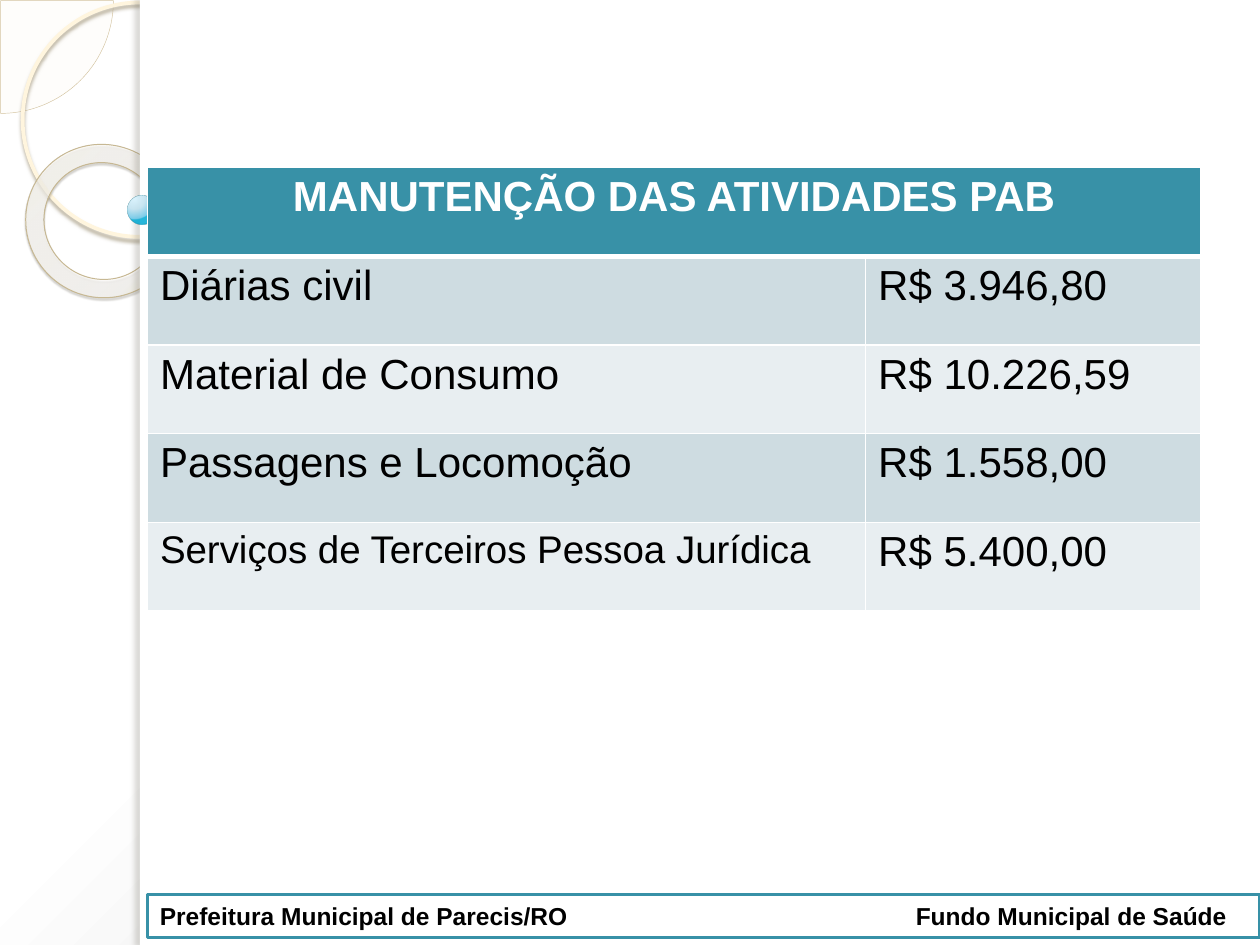
"""Build a health budget slide with a ringed side strip, a table and a footer."""
from lxml.etree import SubElement, Element
from pptx import Presentation
from pptx.dml.color import RGBColor as Rgb
from pptx.enum.shapes import MSO_SHAPE as Shape
from pptx.enum.text import MSO_ANCHOR as Anchor, PP_ALIGN as Align
from pptx.oxml.ns import qn
from pptx.util import Inches, Pt

WHITE, BLACK = Rgb(255, 255, 255), Rgb(0, 0, 0)
TEAL, DARK = Rgb(0x38, 0x91, 0xA7), Rgb(0x31, 0x80, 0x93)
BANDS = Rgb(0xCE, 0xDC, 0xE1), Rgb(0xE8, 0xEE, 0xF1)
CREAM, SAND = Rgb(0xFE, 0xFA, 0xF4), Rgb(0xD3, 0xC3, 0x9F)
IVORY, KHAKI = Rgb(0xFF, 0xF5, 0xDE), Rgb(0xC7, 0xB8, 0x93)
UMBER, BROWN = Rgb(0xB0, 0xA6, 0x8F), Rgb(0x5A, 0x54, 0x44)
GREY, SILVER = Rgb(0x73, 0x6F, 0x63), Rgb(0xC5, 0xC5, 0xC5)
SEA = Rgb(0x30, 0x8E, 0xA5)
PAPER = [(0, WHITE, 100), (40, WHITE, 100), (100, SILVER, 100)]
GOLD = [(0, Rgb(0xFF, 0xFC, 0xF6), 70), (70, Rgb(0xFF, 0xFE, 0xFB), 55),
        (100, Rgb(0xF0, 0xD2, 0x8E), 60)]
AQUA = [(0, Rgb(0xDA, 0xF4, 0xFF), 95), (50, Rgb(0xC3, 0xE3, 0xF0), 90),
        (95, Rgb(0x6B, 0xC7, 0xE8), 88), (100, Rgb(0, 0xAB, 0xD5), 85)]
HEAD = "MANUTENÇÃO DAS ATIVIDADES PAB"
ROWS = [("Diárias civil", "R$ 3.946,80"),
        ("Material de Consumo", "R$ 10.226,59"),
        ("Passagens e Locomoção", "R$ 1.558,00"),
        ("Serviços de Terceiros Pessoa Jurídica", "R$ 5.400,00")]


def tint(node, color, alpha=100):
    """Add a colour with an opacity in percent to an XML node."""
    clr = SubElement(node, qn("a:srgbClr"), val=str(color))
    if alpha < 100:
        SubElement(clr, qn("a:alpha"), val=str(alpha * 1000))


def fade(props, stops, rect):
    """Swap the solid fill of a property node for a round gradient."""
    grad = Element(qn("a:gradFill"), rotWithShape="1")
    items = SubElement(grad, qn("a:gsLst"))
    for pos, color, alpha in stops:
        tint(SubElement(items, qn("a:gs"), pos=str(pos * 1000)), color, alpha)
    way = SubElement(grad, qn("a:path"), path="circle")
    sides = {side: str(val * 1000) for side, val in zip("ltrb", rect)}
    SubElement(way, qn("a:fillToRect"), **sides)
    props.replace(props.find(qn("a:solidFill")), grad)


def shade(shape, color, alpha, blur, dist, angle):
    """Give a shape an outer shadow."""
    fx = shape.element.spPr.find(qn("a:effectLst"))
    node = SubElement(fx, qn("a:outerShdw"), blurRad=str(Pt(blur)),
                      dist=str(Pt(dist)), dir=str(angle * 60000),
                      algn="tl", rotWithShape="0")
    tint(node, color, alpha)


def draw(slide, kind, box, fill=None, alpha=100, line=None, width=1, clear=100):
    """Add a preset shape with a plain fill and line."""
    shape = slide.shapes.add_shape(kind, *map(Inches, box))
    shape.shadow.inherit = False
    if fill is None:
        shape.fill.background()
    else:
        shape.fill.solid()
        shape.fill.fore_color.rgb = fill
        if alpha < 100:
            node = shape.element.spPr.find(qn("a:solidFill"))
            node.clear()
            tint(node, fill, alpha)
    if line is None:
        shape.line.fill.background()
    else:
        shape.line.color.rgb = line
        shape.line.width = Pt(width)
        if clear < 100:
            node = shape.element.spPr.find(qn("a:ln")).find(qn("a:solidFill"))
            node.clear()
            tint(node, line, clear)
    return shape


def put(frame, text, size=24, bold=False, color=BLACK, align=Align.LEFT):
    """Write one formatted paragraph into a text frame."""
    para = frame.paragraphs[0]
    para.alignment = align
    run = para.add_run()
    run.text = text
    font = run.font
    font.name, font.size, font.bold = "Arial", Pt(size), bold
    font.color.rgb = color
    return para


def strip(slide, box):
    """Draw the rings on the left and the white page beside them."""
    left, top, width, height = box
    edge = left + width
    pie = draw(slide, Shape.PIE, (left - 0.89, top - 0.89, 1.79, 1.79),
               CREAM, 33, SAND, 0.25)
    pie.adjustments[0], pie.adjustments[1] = 0, 54
    ring = draw(slide, Shape.OVAL, (left + 0.18, top + 0.02, 1.86, 1.86),
                line=IVORY, width=2.15)
    shade(ring, UMBER, 85, 2, 2, 90)
    donut = draw(slide, Shape.DONUT, (left + 0.2, top + 1.15, 1.23, 1.21),
                 WHITE, line=KHAKI, width=0.58)
    donut.adjustments[0] = 0.12
    donut.rotation = 38.6
    fade(donut.element.spPr, GOLD, (-408, -50, 508, 150))
    shade(donut, BROWN, 35, 1, 1.2, 75)
    draw(slide, Shape.RECTANGLE, (edge, top, 10 - edge, height), WHITE)
    bar = draw(slide, Shape.RECTANGLE, (edge, top, 0.08, height), WHITE)
    shade(bar, GREY, 25, 3, 3, 180)
    ball = draw(slide, Shape.OVAL, (edge - 0.1, top + 1.55, 0.23, 0.23),
                WHITE, line=SEA, width=0.16, clear=60)
    fade(ball.element.spPr, AQUA, (25, 12, 75, 88))
    draw(slide, Shape.OVAL, (edge + 0.16, top + 1.47, 0.07, 0.07),
         line=DARK, clear=60)


def foot(slide, box):
    """Draw the framed footer with its two names set by a tab stop."""
    shape = draw(slide, Shape.RECTANGLE, box, WHITE, line=TEAL, width=2)
    frame = shape.text_frame
    frame.word_wrap = True
    frame.vertical_anchor = Anchor.MIDDLE
    para = put(frame, "Prefeitura Municipal de Parecis/RO\tFundo Municipal de Saúde",
               size=14, bold=True)
    props = para._p.get_or_add_pPr()
    tabs = SubElement(props, qn("a:tabLst"))
    SubElement(tabs, qn("a:tab"), pos=str(Inches(6)), algn="l")


def style(cell, fill, base=1):
    """Fill a cell and rule its four sides in white."""
    cell.fill.solid()
    cell.fill.fore_color.rgb = fill
    props = cell._tc.get_or_add_tcPr()
    for spot, side in enumerate("LRTB"):
        width = base if side == "B" else 1
        line = Element(qn(f"a:ln{side}"), w=str(Pt(width)))
        tint(SubElement(line, qn("a:solidFill")), WHITE)
        props.insert(spot, line)


def costs(slide, box):
    """Draw the table of costs under a merged heading."""
    count = len(ROWS) + 1
    table = slide.shapes.add_table(count, 2, *map(Inches, box)).table
    for col, width in zip(table.columns, (5.7, box[2] - 5.7)):
        col.width = Inches(width)
    for cell in table.rows[0].cells:
        style(cell, TEAL, 3)
    head = table.cell(0, 0)
    head.merge(table.cell(0, 1))
    put(head.text_frame, HEAD, bold=True, color=WHITE, align=Align.CENTER)
    for num, row in enumerate(ROWS, 1):
        for col, text in enumerate(row):
            cell = table.cell(num, col)
            style(cell, BANDS[(num - 1) % 2])
            put(cell.text_frame, text, size=22 if len(text) > 30 else 24)


def main():
    """Build and save the deck."""
    deck = Presentation()
    deck.slide_width, deck.slide_height = Inches(10), Inches(7.5)
    slide = deck.slides.add_slide(deck.slide_layouts[6])
    slide.background.fill.solid()
    fade(next(slide.element.iter(qn("p:bgPr"))), PAPER, (-24, -20, 124, 120))
    strip(slide, (0, 0, 1.11, 7.5))
    foot(slide, (1.17, 7.1, 8.83, 0.34))
    costs(slide, (1.17, 1.33, 8.36, 3.52))
    deck.save("out.pptx")


if __name__ == "__main__":
    main()
